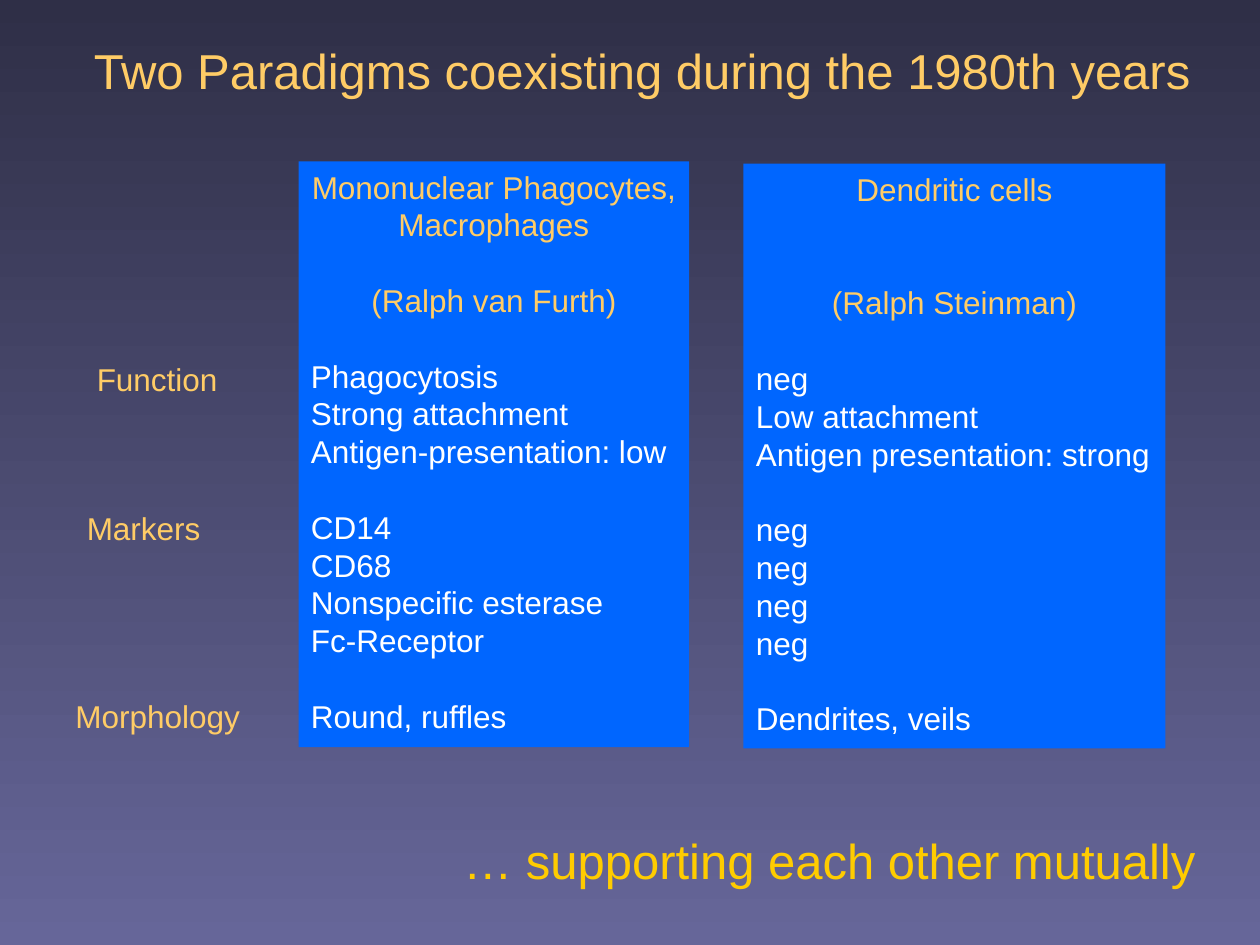
from dataclasses import dataclass
from typing import Any

from pptx import Presentation
from pptx.dml.color import RGBColor
from pptx.enum.shapes import MSO_SHAPE
from pptx.enum.text import MSO_ANCHOR, PP_ALIGN
from pptx.util import Inches, Pt

LEFT, CENTER = PP_ALIGN.LEFT, PP_ALIGN.CENTER
TOP, MIDDLE = MSO_ANCHOR.TOP, MSO_ANCHOR.MIDDLE
RECTANGLE = MSO_SHAPE.RECTANGLE

WIDTH, HEIGHT = Inches(10), Inches(7.5)
FONT = "Arial"
SAND, GOLD, WHITE, BLUE = "FFCC66", "FFCC00", "FFFFFF", "0066FF"
BACKDROP = ("2F2F47", "666699")
LINE_RATIO = 1.2
BODY, LARGE = 18, 28


@dataclass(frozen=True)
class Area:
    """Left, top, width and height as percentages of the slide."""

    left: float
    top: float
    width: float
    height: float

    def lengths(self) -> dict[str, int]:
        return {
            "left": int(WIDTH * self.left / 100),
            "top": int(HEIGHT * self.top / 100),
            "width": int(WIDTH * self.width / 100),
            "height": int(HEIGHT * self.height / 100),
        }


@dataclass(frozen=True)
class Line:
    """One paragraph, with the number of empty rows above it."""

    text: str
    color: str = WHITE
    align: PP_ALIGN = LEFT
    gap: int = 0
    size: int = BODY


@dataclass(frozen=True)
class Paradigm:
    """A column of the comparison: heading, researcher and groups of traits."""

    area: Area
    heading: tuple[str, ...]
    researcher: str
    groups: tuple[tuple[str, ...], ...]


@dataclass(frozen=True)
class Caption:
    """A free-standing line of text."""

    area: Area
    line: Line


HEADING_ROWS = 3
TITLE = Caption(
    Area(3.5, 1.73, 94.9, 11.33),
    Line("Two Paradigms coexisting during the 1980th years", SAND, CENTER, size=LARGE),
)
PARADIGMS = (
    Paradigm(
        Area(23.7, 17.07, 31, 62),
        ("Mononuclear Phagocytes,", "Macrophages"),
        "(Ralph van Furth)",
        (
            ("Phagocytosis", "Strong attachment", "Antigen-presentation: low"),
            ("CD14", "CD68", "Nonspecific esterase", "Fc-Receptor"),
            ("Round, ruffles",),
        ),
    ),
    Paradigm(
        Area(59, 17.33, 33.5, 61.87),
        ("Dendritic cells",),
        "(Ralph Steinman)",
        (
            ("neg", "Low attachment", "Antigen presentation: strong"),
            ("neg",) * 4,
            ("Dendrites, veils",),
        ),
    ),
)
CAPTIONS = (
    Caption(Area(35.8, 87.2, 60.9, 7.6), Line("… supporting each other mutually", GOLD, size=LARGE)),
    Caption(Area(6.7, 37.47, 11.7, 5.33), Line("Function", SAND)),
    Caption(Area(5.9, 53.2, 11.1, 5.33), Line("Markers", SAND)),
    Caption(Area(5, 73.07, 15.2, 5.33), Line("Morphology", SAND)),
)


def rgb(color: str) -> RGBColor:
    """Turn a hex string into a colour."""
    return RGBColor.from_string(color)


def assign(target: Any, values: dict[str, Any]) -> None:
    """Set each named attribute of the target."""
    for name, value in values.items():
        setattr(target, name, value)


def write(frame: Any, lines: list[Line], wrap: bool, anchor: MSO_ANCHOR = TOP) -> None:
    """Fill a text frame with formatted lines."""
    assign(frame, {"word_wrap": wrap, "vertical_anchor": anchor})
    for index, line in enumerate(lines):
        para = frame.add_paragraph() if index else frame.paragraphs[0]
        pitch = line.size * LINE_RATIO
        assign(para, {
            "alignment": line.align,
            "line_spacing": Pt(pitch),
            "space_before": Pt(line.gap * pitch),
            "space_after": Pt(0),
        })
        span = para.add_run()
        span.text = line.text
        assign(span.font, {"name": FONT, "size": Pt(line.size), "bold": False})
        span.font.color.rgb = rgb(line.color)


def paradigm_lines(paradigm: Paradigm) -> list[Line]:
    """Lay out a column so that its rows match those of its neighbour."""
    lines = [Line(text, SAND, CENTER) for text in paradigm.heading]
    gap = HEADING_ROWS - len(paradigm.heading)
    lines.append(Line(paradigm.researcher, SAND, CENTER, gap))
    for group in paradigm.groups:
        lines += [Line(text, gap=int(row == 0)) for row, text in enumerate(group)]
    return lines


def draw_paradigm(page: Any, paradigm: Paradigm) -> None:
    """Draw one blue column."""
    box = page.shapes.add_shape(RECTANGLE, **paradigm.area.lengths())
    box.shadow.inherit = False
    box.fill.solid()
    box.fill.fore_color.rgb = rgb(BLUE)
    box.line.fill.background()
    write(box.text_frame, paradigm_lines(paradigm), wrap=True)


def draw_caption(page: Any, caption: Caption) -> None:
    """Draw one line of text on the backdrop."""
    box = page.shapes.add_textbox(**caption.area.lengths())
    write(box.text_frame, [caption.line], wrap=False)


def paint_backdrop(page: Any) -> None:
    """Give the page a gradient from top to bottom."""
    fill = page.background.fill
    fill.gradient()
    fill.gradient_angle = 270
    for stop, color, position in zip(fill.gradient_stops, BACKDROP, (0, 1)):
        stop.color.rgb = rgb(color)
        stop.position = position


def main() -> None:
    """Build and save the deck."""
    deck = Presentation()
    assign(deck, {"slide_width": WIDTH, "slide_height": HEIGHT})
    page = deck.slides.add_slide(deck.slide_layouts.get_by_name("Title Only"))
    paint_backdrop(page)
    title = page.shapes.title
    assign(title, TITLE.area.lengths())
    write(title.text_frame, [TITLE.line], wrap=True, anchor=MIDDLE)
    for paradigm in PARADIGMS:
        draw_paradigm(page, paradigm)
    for caption in CAPTIONS:
        draw_caption(page, caption)
    deck.save("out.pptx")


if __name__ == "__main__":
    main()
